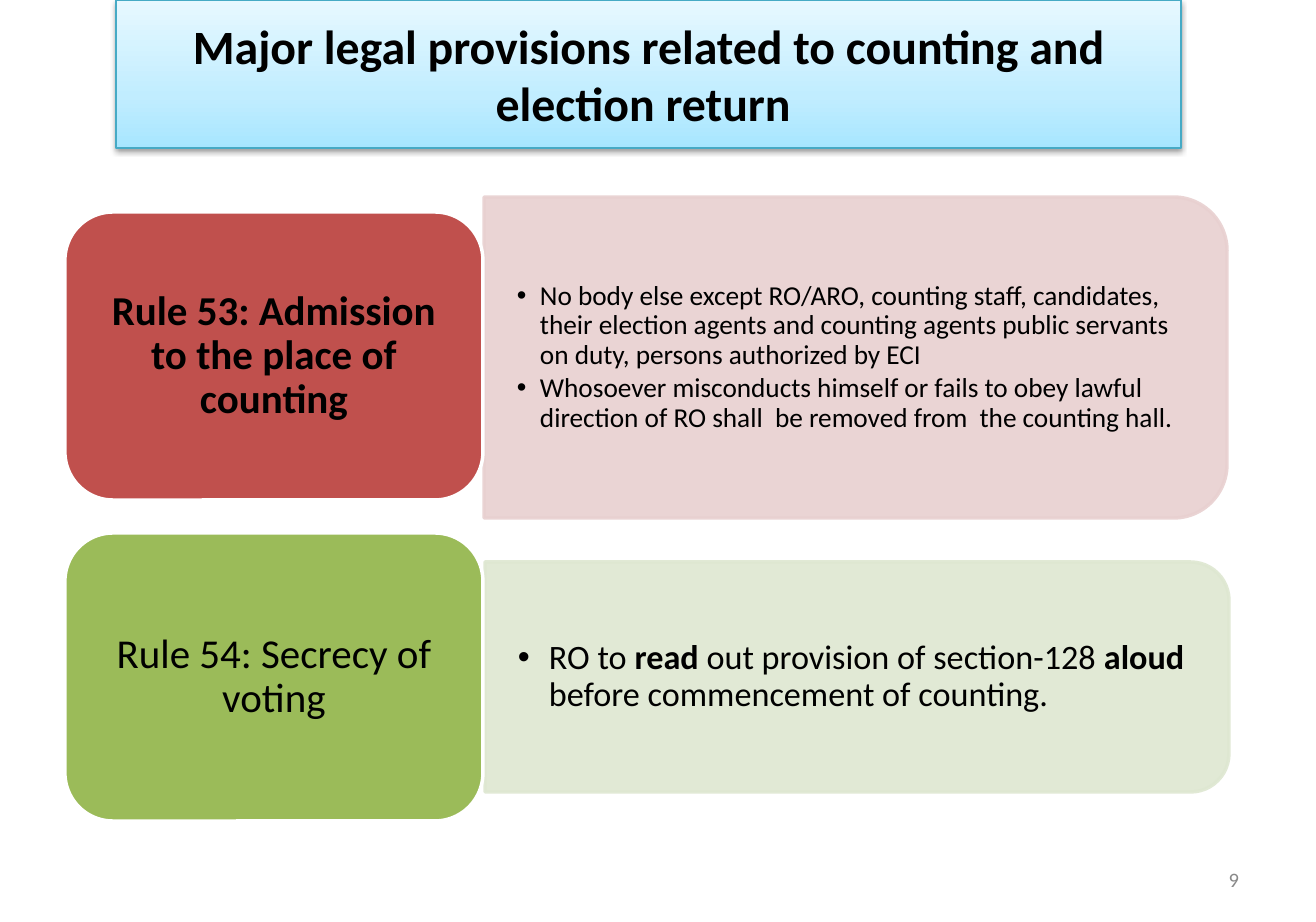
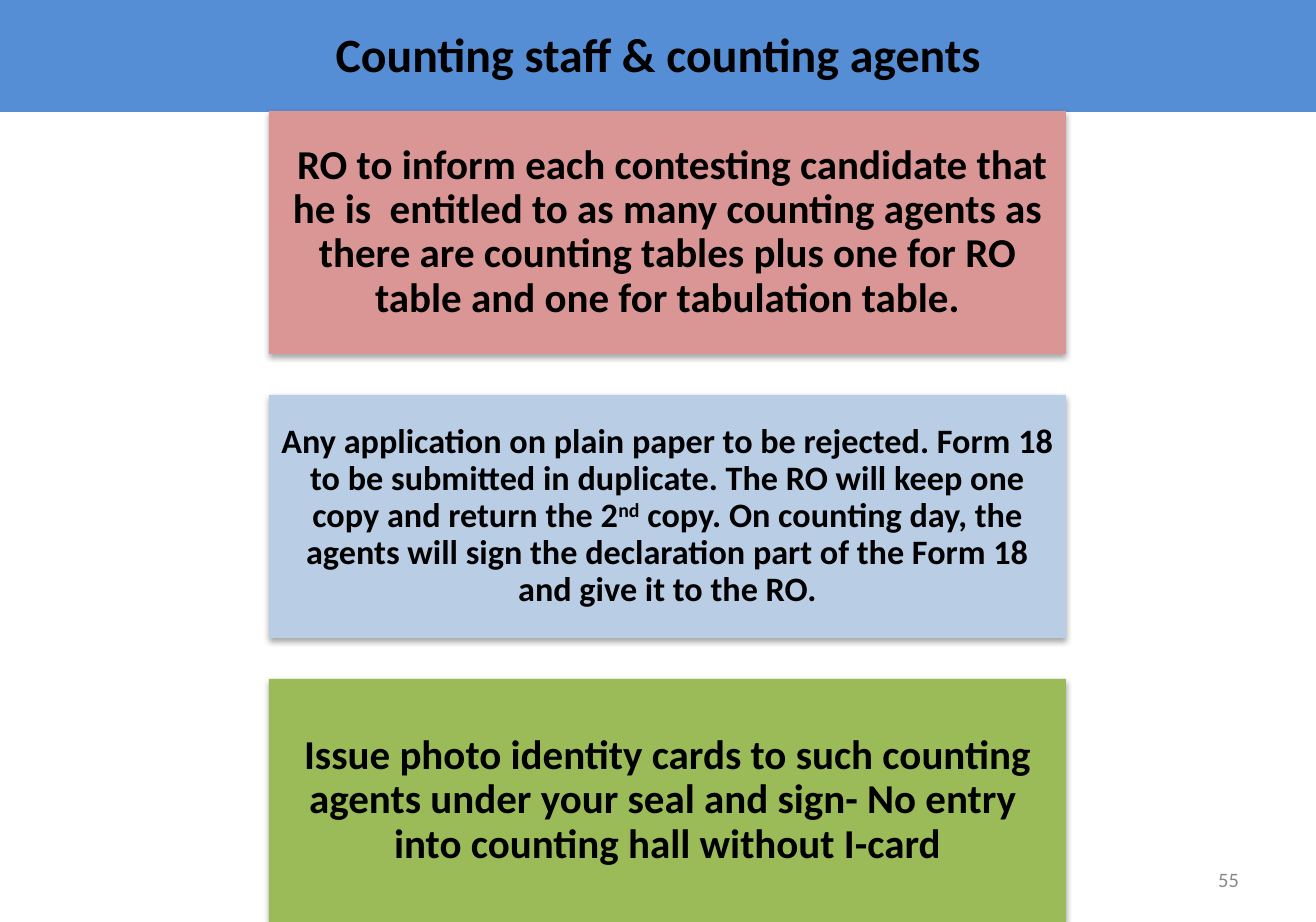
from copy import deepcopy

from lxml.etree import SubElement as Sub
from pptx import Presentation
from pptx.dml.color import RGBColor
from pptx.enum.shapes import MSO_SHAPE as Kind
from pptx.enum.text import MSO_ANCHOR as Anchor, PP_ALIGN as Align
from pptx.oxml.ns import qn
from pptx.util import Pt

PX = 914400 / 123
WIDE, HIGH = 1316, 922
FONT = "Calibri"
BLACK = RGBColor(0x00, 0x00, 0x00)
WHITE = RGBColor(0xFF, 0xFF, 0xFF)
GREY = RGBColor(0x89, 0x89, 0x89)
TEAL = RGBColor(0x46, 0xAA, 0xC5)
BLUE = RGBColor(0x55, 0x8E, 0xD5)
MIST = RGBColor(0xB9, 0xCD, 0xE5)
RED = RGBColor(0xC0, 0x50, 0x4D)
ROSE = RGBColor(0xD9, 0x96, 0x94)
BLUSH = RGBColor(0xE8, 0xD0, 0xD0)
GREEN = RGBColor(0x9B, 0xBB, 0x59)
SAGE = RGBColor(0xDE, 0xE7, 0xD1)
SKY = (
    (0, RGBColor(0xA7, 0xE6, 0xFF)),
    (0.35, RGBColor(0xC1, 0xED, 0xFF)),
    (1, RGBColor(0xE7, 0xF8, 0xFF)),
)

TITLE = (116, 0, 1065, 148)
BAND = (0, -5, WIDE, 117)
NUMBER = (943, 855, 308, 49)
STACK = (269, 111, 797, 243)
STEP = 284

RULES = (
    dict(
        card=(65, 212, 418, 288), panel=(484, 197, 743, 321), fill=RED, tint=BLUSH,
        head="Rule 53: Admission to the place of counting", bold=True, size=16, hang=23,
        items=(
            "No body else except RO/ARO, counting staff, candidates, their election agents "
            "and counting agents public servants on duty, persons authorized by ECI",
            "Whosoever misconducts himself or fails to obey lawful direction of RO shall  be "
            "removed from  the counting hall.",
        ),
    ),
    dict(
        card=(65, 533, 418, 288), panel=(485, 562, 744, 230), fill=GREEN, tint=SAGE,
        head="Rule 54: Secrecy of voting", bold=False, size=20, hang=31,
        items=(
            (("RO to ", ""), ("read ", "bold"), ("out provision of section-128 ", ""),
             ("aloud", "bold"), (" before commencement of counting.", "")),
        ),
    ),
)
NOTES = (
    (ROSE, 24, 12,
     " RO to inform each contesting candidate that he is  entitled to as many counting agents "
     "as there are counting tables plus one for RO table and one for tabulation table."),
    (MIST, 20, 10,
     (("Any application on plain paper to be rejected. Form 18 to be submitted in duplicate. "
       "The RO will keep one copy and return the 2", ""), ("nd", "super"),
      (" copy. On counting day, the agents will sign the declaration part of the Form 18 and "
       "give it to the RO.", ""))),
    (GREEN, 24, 12,
     "Issue photo identity cards to such counting agents under your seal and sign- No entry  "
     "into counting hall without I-card"),
)


def emu(*sizes):
    """Turn px into EMU."""
    return [round(size * PX) for size in sizes]


def write(shape, *paras, size=24, bold=False, color=BLACK, align=Align.CENTER,
          space=1.0, inset=(12, 6), hang=0):
    """Fill a shape with paragraphs, each a string or (text, style) runs."""
    frame = shape.text_frame
    frame.word_wrap = True
    frame.vertical_anchor = Anchor.MIDDLE
    frame.margin_left, frame.margin_top = emu(*inset)
    frame.margin_right, frame.margin_bottom = emu(*inset)
    for spot, runs in enumerate(paras):
        para = frame.add_paragraph() if spot else frame.paragraphs[0]
        para.alignment = align
        para.line_spacing = space
        if hang:
            para.space_after = Pt(round(size * 0.15, 1))
            props = para._p.get_or_add_pPr()
            gap, = emu(hang)
            props.set("marL", str(gap))
            props.set("indent", str(-gap))
            Sub(props, qn("a:buFont"), typeface="Arial")
            Sub(props, qn("a:buChar"), char="•")
        for text, style in [(runs, "")] if isinstance(runs, str) else runs:
            run = para.add_run()
            run.text = text
            font = run.font
            font.name, font.size = FONT, Pt(size)
            font.bold = bold or style == "bold"
            font.color.rgb = color
            if style == "super":
                run._r.get_or_add_rPr().set("baseline", "30000")


def draw(slide, kind, box, fill=None, line=None, width=2.0):
    """Add a plain preset shape with its own fill and line."""
    shape = slide.shapes.add_shape(kind, *emu(*box))
    shape.shadow.inherit = False
    if fill is not None:
        shape.fill.solid()
        shape.fill.fore_color.rgb = fill
    if line is None:
        shape.line.fill.background()
    else:
        shape.line.color.rgb = line
        shape.line.width = Pt(width)
    return shape


def shade(shape, dist, alpha):
    """Drop a soft shadow below a shape."""
    effects = shape._element.spPr.find(qn("a:effectLst"))
    drop = Sub(effects, qn("a:outerShdw"), blurRad="40000", dist=str(dist),
               dir="5400000", rotWithShape="0")
    tone = Sub(drop, qn("a:srgbClr"), val="000000")
    Sub(tone, qn("a:alpha"), val=str(alpha * 1000))


def blend(shape, stops):
    """Fill a shape with a gradient that rises from the bottom."""
    shape.fill.gradient()
    shape.fill.gradient_angle = 90
    first = next(shape._element.spPr.iter(qn("a:gs")))
    first.addnext(deepcopy(first))
    for stop, (place, color) in zip(shape.fill.gradient_stops, stops):
        stop.position = place
        stop.color.rgb = color


def label(slide, box, *paras, **form):
    """Add a text box."""
    write(slide.shapes.add_textbox(*emu(*box)), *paras, **form)


def number(slide, text):
    """Add the slide number at the lower right."""
    label(slide, NUMBER, text, size=12, color=GREY, align=Align.RIGHT)


def panel(slide, box, tint, items, size, hang):
    """Add a pale panel, rounded on the right, with bulleted text."""
    left, top, wide, high = box
    turn = (left + (wide - high) / 2, top + (high - wide) / 2, high, wide)
    shape = draw(slide, Kind.ROUND_2_SAME_RECTANGLE, turn, tint, tint)
    shape.rotation = 90
    for tone in shape._element.spPr.iter(qn("a:srgbClr")):
        Sub(tone, qn("a:alpha"), val="90000")
    pad = high // 20
    label(slide, (left, top + pad, wide - pad, high - 2 * pad), *items, size=size,
          align=Align.LEFT, space=0.9, inset=(33, 17), hang=hang)


def rule(slide, card, panel_box, fill, tint, head, bold, items, size, hang):
    """Add one rule: its panel, and its card in front."""
    panel(slide, panel_box, tint, items, size, hang)
    shape = draw(slide, Kind.ROUNDED_RECTANGLE, card, fill, WHITE)
    write(shape, head, bold=bold, space=0.9)


def legal(slide):
    """Build the slide of legal rules."""
    title = draw(slide, Kind.RECTANGLE, TITLE, line=TEAL, width=0.75)
    blend(title, SKY)
    shade(title, 20000, 38)
    write(title, "Major legal provisions related to counting and election return ",
          size=28, bold=True)
    for item in RULES:
        parts = dict(item)
        rule(slide, panel_box=parts.pop("panel"), **parts)
    number(slide, "9")


def agents(slide):
    """Build the slide of stacked notes on agents."""
    band = draw(slide, Kind.RECTANGLE, BAND, BLUE)
    write(band, "Counting staff & counting agents", size=28, bold=True)
    left, top, wide, high = STACK
    for row, (fill, size, pad, text) in enumerate(NOTES):
        note = draw(slide, Kind.RECTANGLE, (left, top + row * STEP, wide, high), fill)
        shade(note, 23000, 35)
        write(note, text, size=size, bold=True, space=0.9, inset=(pad, pad))
    number(slide, "55")


def main():
    """Build and save the deck."""
    deck = Presentation()
    deck.slide_width, deck.slide_height = emu(WIDE, HIGH)
    for build in (legal, agents):
        build(deck.slides.add_slide(deck.slide_layouts[6]))
    deck.save("out.pptx")


if __name__ == "__main__":
    main()
